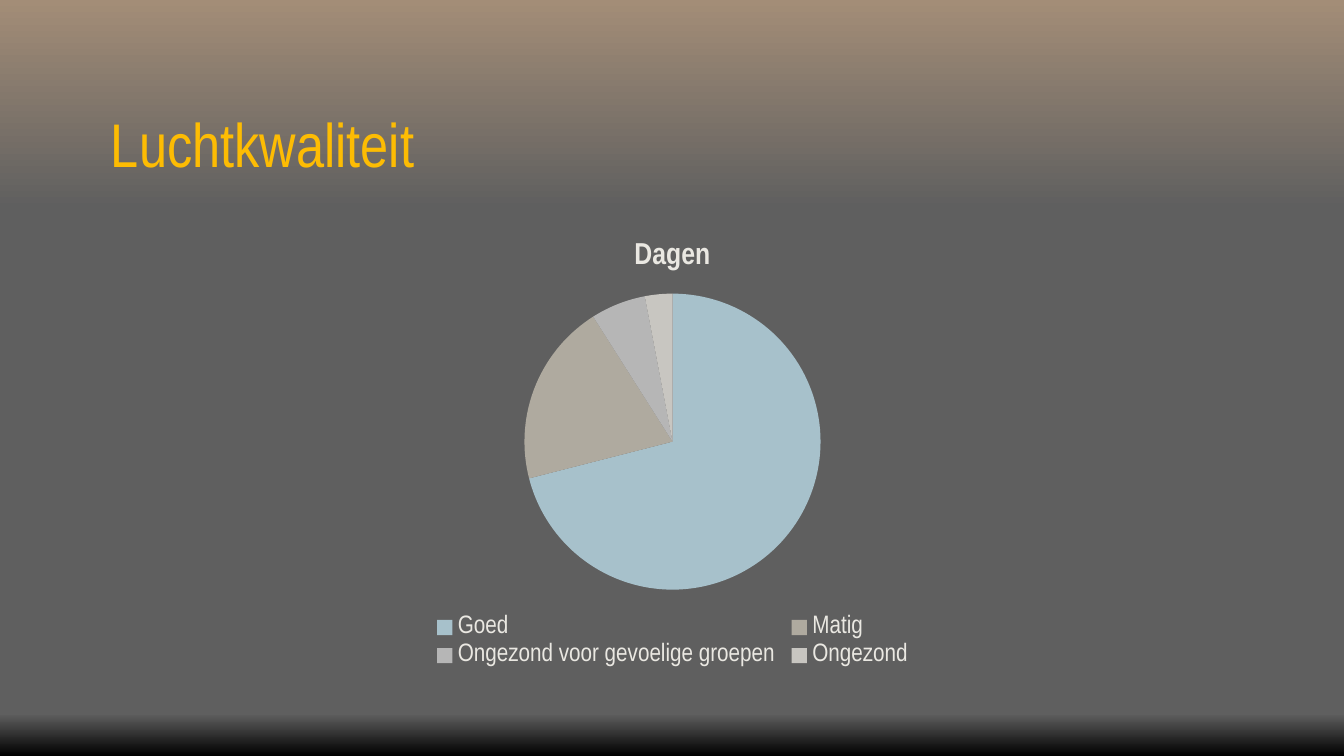
from lxml import etree
from pptx import Presentation
from pptx.chart.data import CategoryChartData
from pptx.dml.color import RGBColor
from pptx.enum.chart import XL_CHART_TYPE, XL_LEGEND_POSITION
from pptx.enum.shapes import MSO_SHAPE
from pptx.enum.text import MSO_ANCHOR, PP_ALIGN
from pptx.oxml.ns import qn
from pptx.util import Inches, Pt

PIE = XL_CHART_TYPE.PIE
BOTTOM = XL_LEGEND_POSITION.BOTTOM
RECT = MSO_SHAPE.RECTANGLE
LEFT = PP_ALIGN.LEFT
ANCHOR_BOTTOM = MSO_ANCHOR.BOTTOM

FONT = "Arial Narrow"
COLORS = {
    "background": "5F5F5F",
    "sand": "A38D77",
    "black": "000000",
    "title": "FDBC03",
    "text": "EAE8E2",
}
DAYS = [
    ("Goed", 71, "A7C1CB"),
    ("Matig", 20, "AFAA9F"),
    ("Ongezond voor gevoelige groepen", 6, "B6B6B6"),
    ("Ongezond", 3, "C8C6C1"),
]


def add_text(tf, text, size=18, color="text", bold=False):
    r = tf.paragraphs[0].add_run()
    r.text = text
    r.font.name = FONT
    r.font.size = Pt(size)
    r.font.bold = bold
    r.font.color.rgb = RGBColor.from_string(COLORS[color])
    return r


prs = Presentation()
prs.slide_width, prs.slide_height = Inches(13.33), Inches(7.5)
s = prs.slides.add_slide(prs.slide_layouts[5])

# Background with a gradient band at the top and the bottom
s.background.fill.solid()
s.background.fill.fore_color.rgb = RGBColor.from_string(COLORS["background"])
for top, height, start, end in [
    (0, 2.08, "sand", "background"),
    (7.08, 0.42, "background", "black"),
]:
    band = s.shapes.add_shape(RECT, 0, Inches(top), prs.slide_width, Inches(height))
    band.shadow.inherit = False
    band.line.fill.background()
    band.fill.gradient()
    band.fill.gradient_angle = 270
    for stop, name, position in zip(band.fill.gradient_stops, (start, end), (0, 1)):
        stop.color.rgb = RGBColor.from_string(COLORS[name])
        stop.position = position

# Title with a text shadow, in front of the bands
title = s.shapes.title
title.left, title.top = Inches(1), Inches(0.58)
title.width, title.height = Inches(11.33), Inches(1.25)
s.shapes._spTree.append(title._element)
tf = title.text_frame
tf.word_wrap = True
tf.vertical_anchor = ANCHOR_BOTTOM
tf.paragraphs[0].alignment = LEFT
r = add_text(tf, "Luchtkwaliteit", size=44, color="title")
effects = etree.Element(qn("a:effectLst"))
shadow = etree.SubElement(effects, qn("a:outerShdw"), dist="38100", dir="2700000")
etree.SubElement(shadow, qn("a:srgbClr"), val=COLORS["black"])
r.font._element.find(qn("a:solidFill")).addnext(effects)

# Pie chart of days by air quality
data = CategoryChartData()
data.categories = [name for name, _, _ in DAYS]
data.add_series("Dagen", [days for _, days, _ in DAYS])
chart = s.shapes.add_chart(
    PIE, Inches(2.42), Inches(2.17), Inches(8.5), Inches(4.5), data
).chart
chart.font.name = FONT
chart.font.size = Pt(18)
chart.font.color.rgb = RGBColor.from_string(COLORS["text"])
chart.has_title = True
add_text(chart.chart_title.text_frame, "Dagen", size=21.6, bold=True)
chart.chart_title.include_in_layout = False
chart.has_legend = True
chart.legend.position = BOTTOM
chart.legend.include_in_layout = False

plot = chart.plots[0]
plot.vary_by_categories = True
for i, (_, _, color) in enumerate(DAYS):
    fill = plot.series[0].points[i].format.fill
    fill.solid()
    fill.fore_color.rgb = RGBColor.from_string(color)

prs.save("out.pptx")
